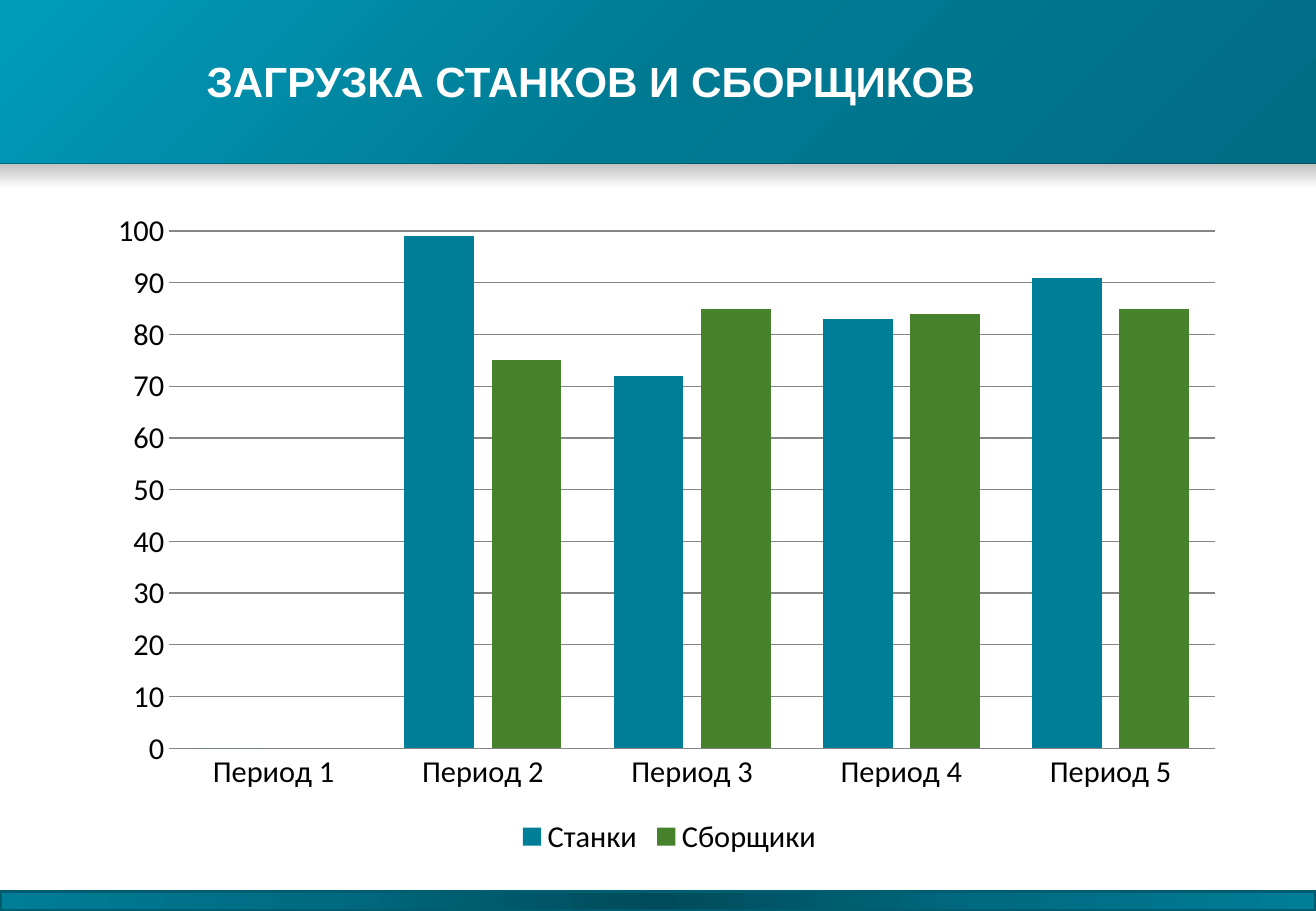
from dataclasses import dataclass

from lxml import etree
from pptx import Presentation
from pptx import util as u
from pptx.chart.data import CategoryChartData
from pptx.dml.color import RGBColor
from pptx.enum import chart as ch
from pptx.enum import shapes, text
from pptx.oxml import parse_xml
from pptx.oxml.ns import nsdecls, qn


@dataclass(frozen=True)
class Theme:
    title_font: str = "Arial"
    chart_font: str = "Calibri"
    title_size: int = 25
    chart_size: int = 18
    title_color: str = "FFFFFF"
    chart_color: str = "000000"
    grid_color: str = "868686"
    footer_line: str = "005D70"
    header_stops: tuple = ((0, "006D84", 100), (50, "007A93", 100), (100, "009CBC", 100))
    shade_stops: tuple = ((0, "000000", 26), (100, "000000", 0))
    footer_stops: tuple = ((0, "004B5A", 100), (50, "006A80", 100), (100, "007E98", 100))
    series_colors: tuple = ("007E98", "46812B")


@dataclass(frozen=True)
class Box:
    left: int
    top: int
    width: int
    height: int

    def share(self, left, top, width, height):
        return Box(
            self.left + round(self.width * left / 100),
            self.top + round(self.height * top / 100),
            round(self.width * width / 100),
            round(self.height * height / 100),
        )

    def place(self):
        return self.left, self.top, self.width, self.height


THEME = Theme()
LINEAR = '<a:lin ang="{}" scaled="0"/>'
CIRCLE = '<a:path path="circle"><a:fillToRect l="50000" t="50000" r="50000" b="50000"/></a:path>'
PERIODS = [f"Период {number}" for number in range(1, 6)]
LOADS = {"Станки": (0, 99, 72, 83, 91), "Сборщики": (0, 75, 85, 84, 85)}


def apply_format(target, values):
    for name, value in values.items():
        setattr(target, name, value)


def rgb(color):
    return RGBColor.from_string(color)


def set_font(font, name, size, color, bold=False):
    apply_format(font, {"name": name, "size": u.Pt(size), "bold": bold})
    font.color.rgb = rgb(color)


def add_band(slide, box, stops, direction):
    band = slide.shapes.add_shape(shapes.MSO_SHAPE.RECTANGLE, *box.place())
    band.shadow.inherit = False
    band.line.fill.background()
    stop_xml = "".join(
        f'<a:gs pos="{position * 1000}"><a:srgbClr val="{color}">'
        f'<a:alpha val="{opacity * 1000}"/></a:srgbClr></a:gs>'
        for position, color, opacity in stops
    )
    gradient = parse_xml(
        f'<a:gradFill {nsdecls("a")} rotWithShape="1">'
        f"<a:gsLst>{stop_xml}</a:gsLst>{direction}</a:gradFill>"
    )
    band.element.spPr.find(qn("a:prstGeom")).addnext(gradient)
    return band


def add_header(slide, box, title):
    add_band(slide, box, THEME.header_stops, LINEAR.format(225 * 60000))
    add_band(slide, box.share(0, 100, 100, 14.07), THEME.shade_stops, LINEAR.format(90 * 60000))
    title_box = slide.shapes.add_textbox(*box.share(15.7, 30.37, 68.61, 37.78).place())
    frame = title_box.text_frame
    apply_format(frame, {
        "word_wrap": True,
        "vertical_anchor": text.MSO_ANCHOR.MIDDLE,
        "margin_left": 0,
        "margin_right": 0,
    })
    paragraph = frame.paragraphs[0]
    paragraph.alignment = text.PP_ALIGN.LEFT
    run = paragraph.add_run()
    run.text = title
    set_font(run.font, THEME.title_font, THEME.title_size, THEME.title_color, True)


def add_footer(slide, box):
    band = add_band(slide, box, THEME.footer_stops, CIRCLE)
    band.line.color.rgb = rgb(THEME.footer_line)
    band.line.width = u.Pt(2)


def set_plot_area(chart, **shares):
    area = chart.element.find(f".//{qn('c:plotArea')}")
    for layout in area.findall(qn("c:layout")):
        area.remove(layout)
    layout = etree.Element(qn("c:layout"))
    manual = etree.SubElement(layout, qn("c:manualLayout"))
    settings = {"layoutTarget": "inner", "xMode": "edge", "yMode": "edge", **shares}
    for name, value in settings.items():
        etree.SubElement(manual, qn(f"c:{name}")).set("val", str(value))
    area.insert(0, layout)


def add_load_chart(slide, box):
    data = CategoryChartData(number_format="General")
    data.categories = PERIODS
    for name, values in LOADS.items():
        data.add_series(name, values)
    chart = slide.shapes.add_chart(
        ch.XL_CHART_TYPE.COLUMN_CLUSTERED, *box.place(), data
    ).chart
    set_font(chart.font, THEME.chart_font, THEME.chart_size, THEME.chart_color)
    apply_format(chart, {"has_title": False, "has_legend": True})
    apply_format(chart.legend, {
        "position": ch.XL_LEGEND_POSITION.BOTTOM,
        "include_in_layout": False,
    })
    plot = chart.plots[0]
    apply_format(plot, {"gap_width": 75, "overlap": -25, "vary_by_categories": False})
    for series, color in zip(plot.series, THEME.series_colors):
        series.format.fill.solid()
        series.format.fill.fore_color.rgb = rgb(color)
        series.invert_if_negative = False

    category_axis, value_axis = chart.category_axis, chart.value_axis
    for axis in (category_axis, value_axis):
        apply_format(axis, {
            "major_tick_mark": ch.XL_TICK_MARK.NONE,
            "minor_tick_mark": ch.XL_TICK_MARK.NONE,
        })
    apply_format(value_axis, {
        "minimum_scale": 0,
        "maximum_scale": 100,
        "major_unit": 10,
        "has_major_gridlines": True,
    })
    value_axis.format.line.fill.background()
    for line in (category_axis.format.line, value_axis.major_gridlines.format.line):
        line.color.rgb = rgb(THEME.grid_color)
        line.width = u.Pt(0.75)
    set_plot_area(chart, x=0.06, y=0.05, w=0.92, h=0.78)


def build_chart_slide(presentation):
    slide = presentation.slides.add_slide(presentation.slide_layouts[6])
    page = Box(0, 0, presentation.slide_width, presentation.slide_height)
    add_header(slide, page.share(0, 0, 100, 18), "ЗАГРУЗКА СТАНКОВ И СБОРЩИКОВ")
    add_footer(slide, page.share(0, 97.87, 100, 2.13))
    add_load_chart(slide, page.share(7.66, 21.73, 86.43, 72.8))


def main():
    presentation = Presentation()
    apply_format(presentation, {
        "slide_width": u.Inches(10.83),
        "slide_height": u.Inches(7.5),
    })
    build_chart_slide(presentation)
    presentation.save("out.pptx")


if __name__ == "__main__":
    main()
